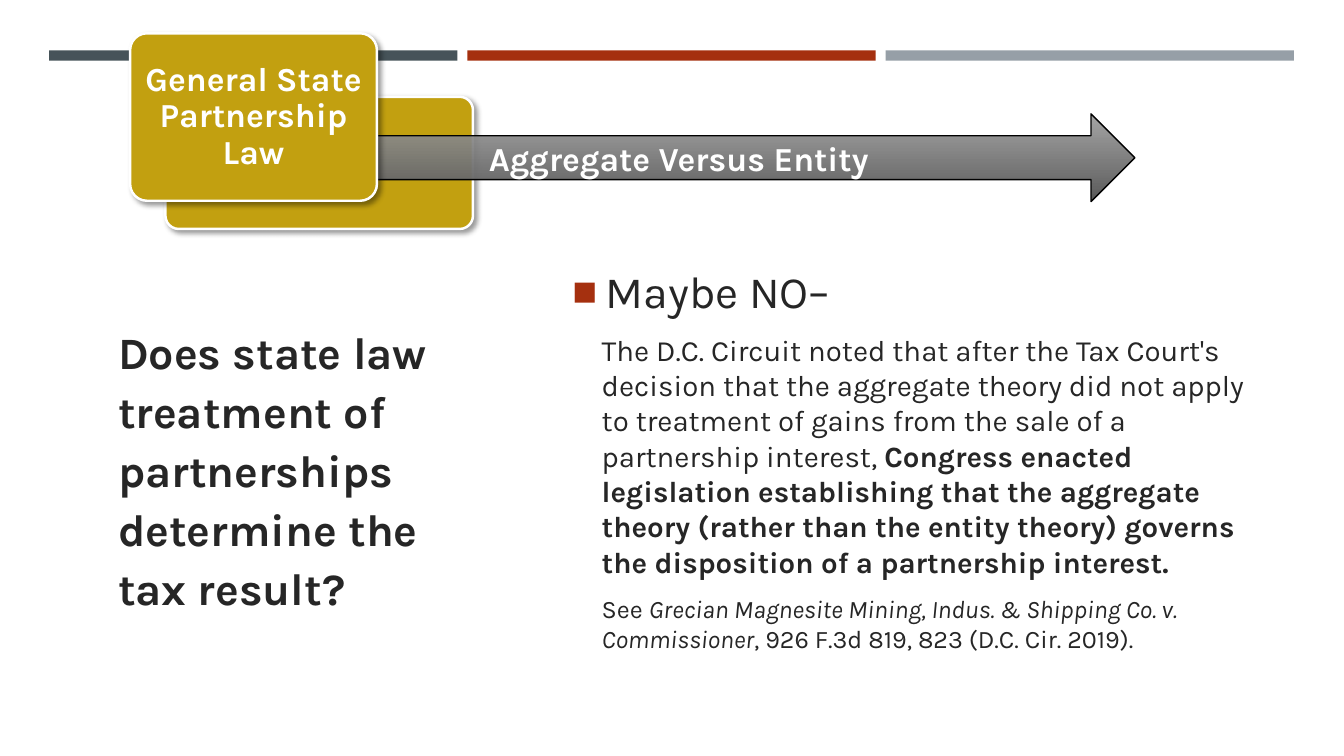
from dataclasses import dataclass

from lxml import etree
from pptx import Presentation, util as u
from pptx.dml.color import RGBColor
from pptx.enum import shapes, text
from pptx.oxml import ns


@dataclass(frozen=True)
class Theme:
    font: str = "Karla"
    ink: str = "262626"
    white: str = "FFFFFF"
    black: str = "000000"
    gold: str = "C2A010"
    red: str = "A5300F"
    bars: tuple = ("465359", "A5300F", "969FA7")
    arrow: tuple = ("9B9B9B", "595959")
    heading: int = 32
    label: int = 24
    detail: int = 21
    citation: int = 18


def set_attributes(target, values):
    for name, value in values.items():
        setattr(target, name, value)


def add_xml(parent, tag, **attributes):
    return etree.SubElement(parent, ns.qn(tag), attributes)


class SlideBuilder:
    def __init__(self, presentation, theme):
        self.theme = theme
        self.slide = presentation.slides.add_slide(presentation.slide_layouts[1])

    def place(self, shape, box):
        names = ("left", "top", "width", "height")
        set_attributes(shape, {name: u.Cm(value) for name, value in zip(names, box)})

    def frame(self, shape, margin=None):
        frame = shape.text_frame
        set_attributes(frame, {"word_wrap": True, "auto_size": text.MSO_AUTO_SIZE.NONE,
                               "vertical_anchor": text.MSO_ANCHOR.MIDDLE})
        if margin is not None:
            sides = ("left", "top", "right", "bottom")
            set_attributes(frame, {f"margin_{side}": u.Cm(margin) for side in sides})
        return frame

    def add_words(self, paragraph, words, size, color, bold=False, italic=False):
        run = paragraph.add_run()
        run.text = words
        set_attributes(run.font, {"name": self.theme.font, "size": u.Pt(size),
                                  "bold": bold, "italic": italic})
        run.font.color.rgb = RGBColor.from_string(color)

    def shape(self, kind, box, fill=None, line=None, line_width=1.0):
        shape = self.slide.shapes.add_shape(kind, *map(u.Cm, box))
        shape.shadow.inherit = False
        if fill:
            shape.fill.solid()
            shape.fill.fore_color.rgb = RGBColor.from_string(fill)
        if line:
            shape.line.color.rgb = RGBColor.from_string(line)
            shape.line.width = u.Pt(line_width)
        else:
            shape.line.fill.background()
        return shape

    def label(self, shape, words, spacing=1.0, margin=None):
        paragraph = self.frame(shape, margin).paragraphs[0]
        set_attributes(paragraph, {"alignment": text.PP_ALIGN.CENTER, "line_spacing": spacing})
        self.add_words(paragraph, words, self.theme.label, self.theme.white, bold=True)

    def card(self, box):
        card = self.shape(shapes.MSO_SHAPE.ROUNDED_RECTANGLE, box,
                          self.theme.gold, self.theme.white, 1.75)
        card.adjustments[0] = 0.1
        effects = card.element.spPr.find(ns.qn("a:effectLst"))
        shadow = add_xml(effects, "a:outerShdw", blurRad=str(u.Pt(4)), dist=str(u.Pt(3)),
                         dir="2700000", algn="ctr", rotWithShape="0")
        color = add_xml(shadow, "a:srgbClr", val=self.theme.black)
        add_xml(color, "a:alpha", val="40000")
        return card

    def arrow(self, box, words):
        arrow = self.shape(shapes.MSO_SHAPE.RIGHT_ARROW, box, line=self.theme.black)
        arrow.fill.gradient()
        arrow.fill.gradient_angle = 270
        for position, (stop, color) in enumerate(zip(arrow.fill.gradient_stops, self.theme.arrow)):
            stop.position = position
            stop.color.rgb = RGBColor.from_string(color)
        first_color = next(arrow.element.spPr.iter(ns.qn("a:srgbClr")))
        add_xml(first_color, "a:alpha", val="90000")
        self.label(arrow, words)

    def title(self, box, words):
        title = self.slide.shapes.title
        self.place(title, box)
        paragraph = self.frame(title).paragraphs[0]
        set_attributes(paragraph, {"alignment": text.PP_ALIGN.LEFT, "line_spacing": 1.1,
                                   "space_before": u.Pt(0), "space_after": u.Pt(6)})
        self.add_words(paragraph, words, self.theme.heading, self.theme.ink, bold=True)

    def body(self, box, items):
        body = self.slide.placeholders[1]
        self.place(body, box)
        frame = self.frame(body)
        for index, (size, runs) in enumerate(items):
            paragraph = frame.add_paragraph() if index else frame.paragraphs[0]
            set_attributes(paragraph, {"level": min(index, 1), "space_after": u.Pt(6),
                                       "space_before": u.Pt(4 if index else 0)})
            self.bullet(paragraph, visible=index == 0)
            for words, style in runs:
                self.add_words(paragraph, words, size, self.theme.ink, **style)

    def bullet(self, paragraph, visible):
        properties = paragraph._p.get_or_add_pPr()
        properties.set("marL", str(u.Cm(1.75 if visible else 1.65)))
        properties.set("indent", str(u.Cm(-0.84 if visible else 0)))
        if not visible:
            add_xml(properties, "a:buNone")
            return
        add_xml(add_xml(properties, "a:buClr"), "a:srgbClr", val=self.theme.red)
        add_xml(properties, "a:buSzPct", val="92000")
        add_xml(properties, "a:buFont", typeface="Arial")
        add_xml(properties, "a:buChar", char="■")


def main():
    presentation = Presentation()
    presentation.slide_width, presentation.slide_height = u.Cm(33.87), u.Cm(19.05)
    theme = Theme()
    builder = SlideBuilder(presentation, theme)

    # Three bars along the top
    for column, color in enumerate(theme.bars):
        builder.shape(shapes.MSO_SHAPE.RECTANGLE,
                      (1.24 + column * 10.54, 1.27, 10.29, 0.26), color)

    # Topic cards with the arrow between them
    builder.card((4.17, 2.44, 7.75, 3.33))
    builder.arrow((6.17, 2.87, 22.43, 2.21), "Aggregate Versus Entity")
    topic = builder.card((3.28, 0.84, 6.22, 4.22))
    builder.label(topic, "General State Partnership Law", 0.9, 0.2)

    # Question on the left
    builder.title((2.72, 6.63, 9.65, 10.26),
                  "Does state law treatment of partnerships determine the tax result?")

    # Answer on the right
    builder.body((13.26, 5.54, 19.08, 12.04), [
        (theme.heading, [("Maybe NO–", {})]),
        (theme.detail, [
            ("The D.C. Circuit noted that after the Tax Court's decision that the aggregate "
             "theory did not apply to treatment of gains from the sale of a partnership "
             "interest, ", {}),
            ("Congress enacted legislation establishing that the aggregate theory (rather "
             "than the entity theory) governs the disposition of a partnership interest.",
             {"bold": True})]),
        (theme.citation, [
            ("See ", {}),
            ("Grecian Magnesite Mining, Indus. & Shipping Co. v. Commissioner",
             {"italic": True}),
            (", 926 F.3d 819, 823 (D.C. Cir. 2019).", {})]),
    ])

    presentation.save("out.pptx")


if __name__ == "__main__":
    main()
